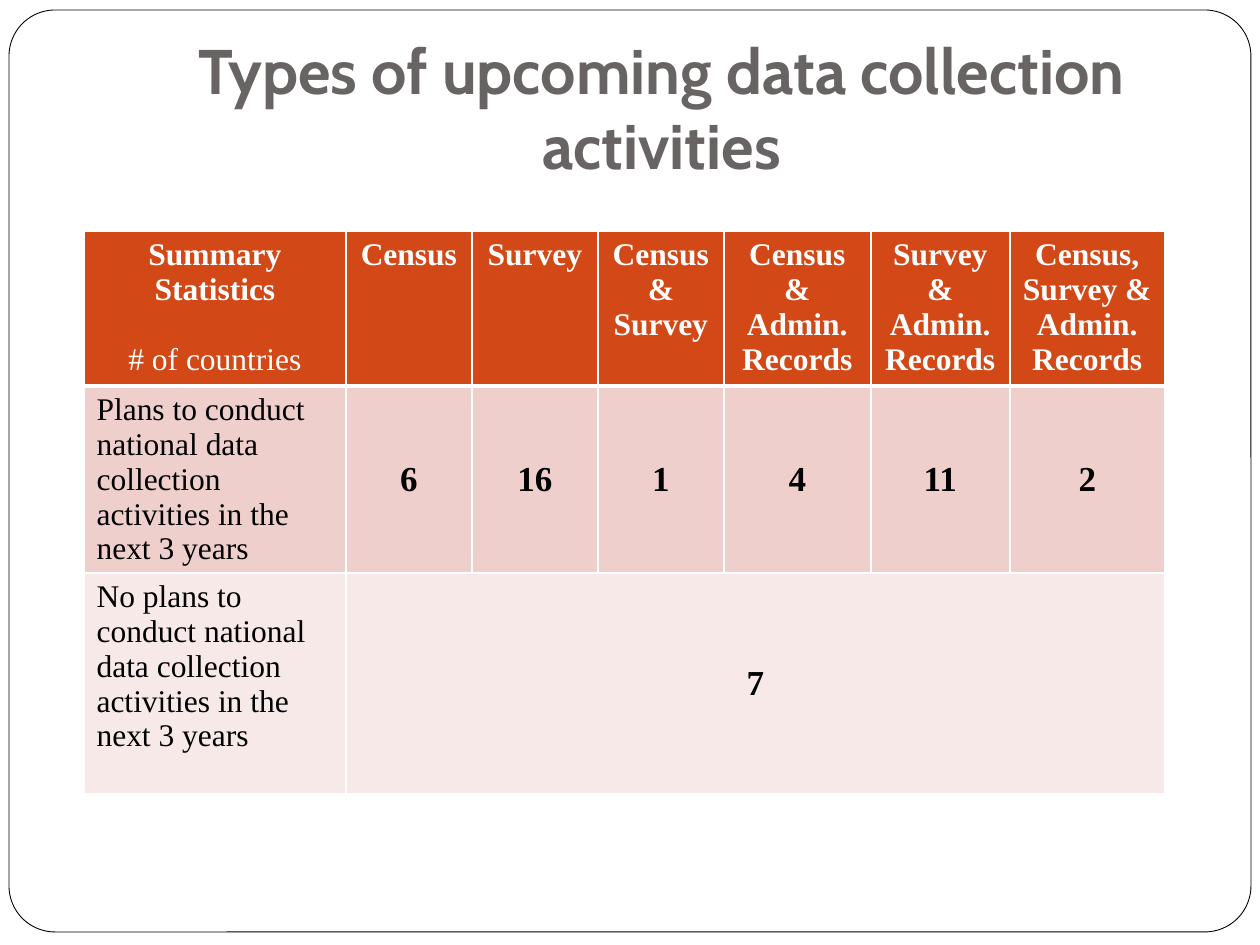
import pptx
import pptx.util
import pptx.dml.color
import pptx.enum.shapes
import pptx.enum.text
import pptx.oxml

RGB = pptx.dml.color.RGBColor
WHITE = RGB(0xFF, 0xFF, 0xFF)
BLACK = RGB(0, 0, 0)
GREY = RGB(0x69, 0x64, 0x64)
RUST = RGB(0xD3, 0x48, 0x17)
ROSE = RGB(0xEF, 0xCF, 0xCC)
PALE = RGB(0xF7, 0xE9, 0xE8)
PX = 914400 // 126
Pt = pptx.util.Pt
ALIGN = pptx.enum.text.PP_ALIGN
ANCHOR = pptx.enum.text.MSO_ANCHOR
NS = 'xmlns:a="http://schemas.openxmlformats.org/drawingml/2006/main"'


def style(para, font, size, color, bold, align):
    para.alignment = align
    for run in para.runs:
        run.font.name = font
        run.font.size = Pt(size)
        run.font.bold = bold
        run.font.color.rgb = color


def edge(cell, base):
    # Borders must come before the fill in the cell properties
    props = cell._tc.get_or_add_tcPr()
    for i, (side, width) in enumerate(zip("LRTB", (1, 1, 1, base))):
        props.insert(i, pptx.oxml.parse_xml(
            f'<a:ln{side} {NS} w="{Pt(width)}"><a:solidFill>'
            f'<a:srgbClr val="{WHITE}"/></a:solidFill></a:ln{side}>'))


prs = pptx.Presentation()
prs.slide_width = 1260 * PX
prs.slide_height = 945 * PX
slide = prs.slides.add_slide(prs.slide_layouts[5])

# Rounded frame, behind everything
frame = slide.shapes.add_shape(
    pptx.enum.shapes.MSO_SHAPE.ROUNDED_RECTANGLE,
    9 * PX, 10 * PX, 1242 * PX, 922 * PX)
frame.adjustments[0] = 0.05
frame.shadow.inherit = False
frame.fill.solid()
frame.fill.fore_color.rgb = WHITE
frame.line.color.rgb = BLACK
frame.line.width = Pt(0.5)
slide.shapes._spTree.insert(2, frame._element)

# Title
title = slide.shapes.title
title.left, title.top = 126 * PX, 38 * PX
title.width, title.height = 1071 * PX, 157 * PX
text = title.text_frame
text.text = "Types of upcoming data collection activities"
text.word_wrap = True
text.auto_size = pptx.enum.text.MSO_AUTO_SIZE.NONE
text.vertical_anchor = ANCHOR.BOTTOM
text.margin_bottom = Pt(7.2)
style(text.paragraphs[0], "Cabin", 36, GREY, True, ALIGN.CENTER)

# Table
rows = [
    ["Summary Statistics\n# of countries", "Census", "Survey",
     "Census & Survey", "Census & Admin. Records",
     "Survey & Admin.\nRecords", "Census, Survey & Admin. Records"],
    ["Plans to conduct national data collection activities in the next 3 years",
     "6", "16", "1", "4", "11", "2"],
    ["No plans to conduct national data collection activities in the next 3 years",
     "7", "", "", "", "", ""],
]
wide = [262, 126, 126, 126, 147, 139, 155]
high = [155, 187, 221]
fills = [RUST, ROSE, PALE]
table = slide.shapes.add_table(
    len(rows), len(wide), 84 * PX, 231 * PX,
    sum(wide) * PX, sum(high) * PX).table
for col, width in zip(table.columns, wide):
    col.width = width * PX
for row, height in zip(table.rows, high):
    row.height = height * PX
table.cell(2, 1).merge(table.cell(2, 6))

for r, row in enumerate(rows):
    for c, words in enumerate(row):
        cell = table.cell(r, c)
        cell.fill.solid()
        cell.fill.fore_color.rgb = fills[r]
        edge(cell, 3 if r == 0 else 1)
        if cell.is_spanned:
            continue
        head, label = r == 0, c == 0
        cell.text_frame.text = words
        if not head and not label:
            cell.vertical_anchor = ANCHOR.MIDDLE
        for para in cell.text_frame.paragraphs:
            style(para, "Times New Roman", 18 if head or label else 20,
                  WHITE if head else BLACK, head or not label,
                  ALIGN.CENTER if head or not label else ALIGN.LEFT)

# Lighter unit line set apart in the corner cell
unit = table.cell(0, 0).text_frame.paragraphs[1]
unit.space_before = Pt(20)
unit.runs[0].font.bold = False

prs.save("out.pptx")
